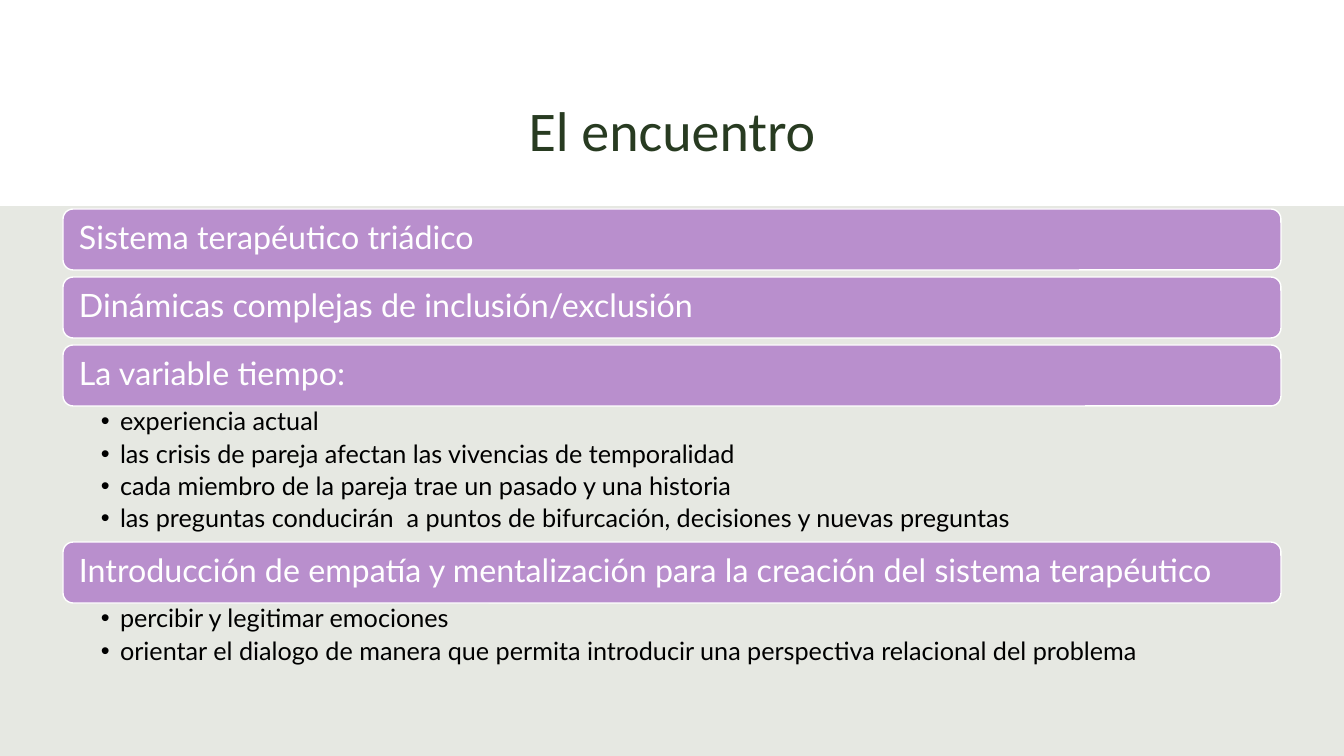
from lxml import etree
from pptx import Presentation, util as u
from pptx.dml.color import RGBColor
from pptx.enum import shapes, text
from pptx.oxml.ns import qn

TITLE = "El encuentro"
TOPICS = [
    ("Sistema terapéutico triádico", []),
    ("Dinámicas complejas de inclusión/exclusión", []),
    ("La variable tiempo:", [
        "experiencia actual",
        "las crisis de pareja afectan las vivencias de temporalidad",
        "cada miembro de la pareja trae un pasado y una historia",
        "las preguntas conducirán  a puntos de bifurcación, decisiones y nuevas preguntas",
    ]),
    ("Introducción de empatía y mentalización para la creación del sistema terapéutico", [
        "percibir y legitimar emociones",
        "orientar el dialogo de manera que permita introducir una perspectiva relacional del problema",
    ]),
]
COLORS = {"white": "FFFFFF", "panel": "E6E8E2", "bar": "B98FCD",
          "title": "283B21", "text": "000000"}
WIDE, HIGH = 1344, 756
PANEL_TOP = 206
LEFT, TOP, WIDTH = 63, 209, 1218
BAR, GAP, ROW = 61, 7, 34
INDENT = 19
ANCHOR, ALIGN = text.MSO_ANCHOR, text.PP_ALIGN
KIND = shapes.MSO_SHAPE


def px(n):
    return u.Emu(round(n * 914400 / 100.8))


def color(name):
    return RGBColor.from_string(COLORS[name])


def box(slide, kind, area, fill, line=None):
    shape = slide.shapes.add_shape(kind, *map(px, area))
    shape.shadow.inherit = False
    shape.fill.solid()
    shape.fill.fore_color.rgb = color(fill)
    if line:
        shape.line.color.rgb = color(line)
        shape.line.width = u.Pt(1)
    else:
        shape.line.fill.background()
    return shape


def write(shape, lines, look, pads, anchor, align=ALIGN.LEFT, space=0.9, after=0):
    """Fill a shape with paragraphs; pads are left, top, right, bottom."""
    frame = shape.text_frame
    frame.word_wrap = True
    frame.vertical_anchor = anchor
    for side, pad in zip(("left", "top", "right", "bottom"), pads):
        setattr(frame, "margin_" + side, px(pad))
    face, size, ink = look
    for i, line in enumerate(lines):
        para = frame.paragraphs[0] if i == 0 else frame.add_paragraph()
        form = {"alignment": align, "line_spacing": space, "space_after": u.Pt(after)}
        for key, value in form.items():
            setattr(para, key, value)
        run = para.add_run()
        run.text = line
        for key, value in {"name": face, "size": u.Pt(size)}.items():
            setattr(run.font, key, value)
        run.font.color.rgb = color(ink)
    return frame


def bullet(para):
    props = para._p.get_or_add_pPr()
    props.set("marL", str(px(INDENT)))
    props.set("indent", str(-px(INDENT)))
    etree.SubElement(props, qn("a:buFont")).set("typeface", "Arial")
    etree.SubElement(props, qn("a:buChar")).set("char", "•")


def main():
    deck = Presentation()
    deck.slide_width, deck.slide_height = px(WIDE), px(HIGH)
    slide = deck.slides.add_slide(deck.slide_layouts[6])
    box(slide, KIND.RECTANGLE, (0, 0, WIDE, HIGH), "white")
    head = slide.shapes.add_textbox(*map(px, (157, 78, 1030, 110)))
    write(head, [TITLE], ("Calibri", 40, "title"), (10, 5, 10, 5),
          ANCHOR.MIDDLE, ALIGN.CENTER)
    box(slide, KIND.RECTANGLE, (0, PANEL_TOP, WIDE, HIGH - PANEL_TOP), "panel")

    top = TOP
    for topic, points in TOPICS:
        bar = box(slide, KIND.ROUNDED_RECTANGLE, (LEFT, top, WIDTH, BAR), "bar", "white")
        write(bar, [topic], ("Lato", 23, "white"), (13, 12, 13, 13), ANCHOR.MIDDLE)
        top += BAR
        if points:
            tall = ROW * len(points)
            notes = slide.shapes.add_textbox(*map(px, (LEFT, top, WIDTH, tall)))
            frame = write(notes, points, ("Lato", 18, "text"), (38, 3, 18, 3),
                          ANCHOR.TOP, after=3.6)
            for para in frame.paragraphs:
                bullet(para)
            top += tall
        else:
            top += GAP
    deck.save("out.pptx")


if __name__ == "__main__":
    main()
